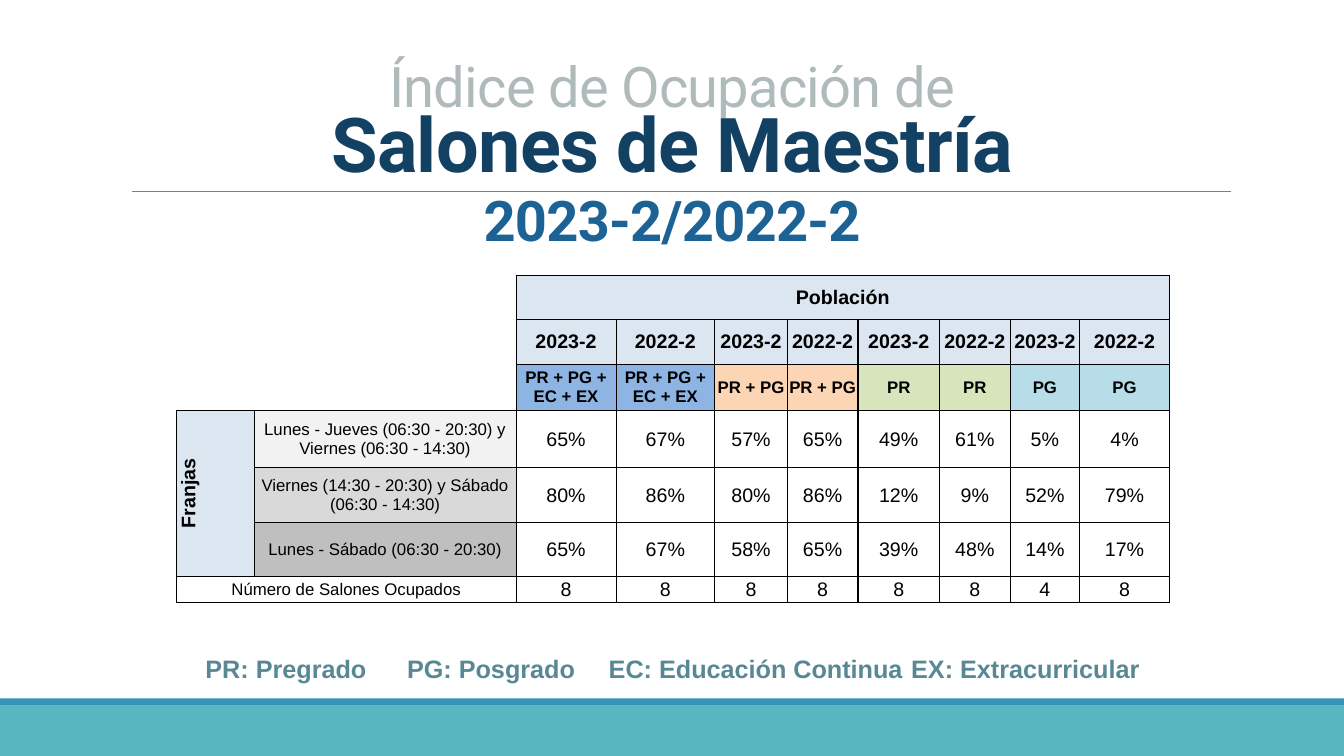
"""Build the classroom occupancy slide for master's programmes."""
from dataclasses import dataclass

from lxml.etree import SubElement
from pptx import Presentation
from pptx.dml.color import RGBColor
from pptx.enum.shapes import MSO_CONNECTOR as CONN, MSO_SHAPE as SHAPE
from pptx.enum.text import MSO_ANCHOR as ANCHOR, MSO_AUTO_SIZE as FIT, PP_ALIGN as ALIGN
from pptx.oxml.ns import qn
from pptx.util import Inches, Pt

TERMS = ["2023-2", "2022-2"]
GROUPS = ["PR + PG + EC + EX", "PR + PG", "PR", "PG"]
SLOTS = [
    ("Lunes - Jueves (06:30 - 20:30) y Viernes (06:30 - 14:30)",
     [65, 67, 57, 65, 49, 61, 5, 4]),
    ("Viernes (14:30 - 20:30) y Sábado (06:30 - 14:30)",
     [80, 86, 80, 86, 12, 9, 52, 79]),
    ("Lunes - Sábado (06:30 - 20:30)",
     [65, 67, 58, 65, 39, 48, 14, 17]),
]
ROOMS = [8, 8, 8, 8, 8, 8, 4, 8]
LEGEND = ["PR: Pregrado", "PG: Posgrado", "EC: Educación Continua", "EX: Extracurricular"]
COL_WIDTHS = [0.77, 2.6, 0.99, 0.98, 0.72, 0.7, 0.81, 0.7, 0.69, 0.89]
ROW_HEIGHTS = [0.44, 0.44, 0.46, 0.57, 0.54, 0.54, 0.26]
FIRST_SLOT, LAST, LABEL_COLS = 3, 6, 2


@dataclass(frozen=True)
class Theme:
    title_font: str = "Roboto"
    body_font: str = "Arial"
    big: int = 54
    heading: int = 40
    legend: int = 18
    cell: int = 14
    label: int = 12
    thick: float = 1
    thin: float = 0.5
    grey: str = "AFBABB"
    navy: str = "134163"
    blue: str = "1D6294"
    teal: str = "58B6C0"
    stripe: str = "3494BA"
    rule: str = "808080"
    key: str = "588894"
    ink: str = "000000"
    white: str = "FFFFFF"
    header: str = "DCE6F1"
    groups: tuple = ("8DB4E2", "FCD5B4", "D8E4BC", "B7DEE8")
    slots: tuple = ("F2F2F2", "D9D9D9", "BFBFBF")


T = Theme()
TITLE = [
    ("Índice de Ocupación de", T.heading, T.grey, False, 0.75),
    ("Salones de Maestría", T.big, T.navy, True, 0.75),
    (" / ".join(TERMS).replace(" ", ""), T.heading, T.blue, True, 1.0),
]


def rgb(color):
    return RGBColor.from_string(color)


def write(p, text, font, size, color, bold):
    p.alignment = ALIGN.CENTER
    r = p.add_run()
    r.text = text
    r.font.name, r.font.size, r.font.bold = font, Pt(size), bold
    r.font.color.rgb = rgb(color)
    return r


def add_band(s, top, height, color):
    sp = s.shapes.add_shape(SHAPE.RECTANGLE, 0, Inches(top), Inches(13.33), Inches(height))
    sp.shadow.inherit = False
    sp.fill.solid()
    sp.fill.fore_color.rgb = rgb(color)
    sp.line.fill.background()


def add_rule(s):
    line = s.shapes.add_connector(CONN.STRAIGHT, Inches(1.31), Inches(1.9), Inches(12.21), Inches(1.9))
    line.line.color.rgb = rgb(T.rule)
    line.line.width = Pt(T.thin)
    SubElement(line._element.spPr, qn("a:effectLst"))


def add_title(s):
    sp = s.shapes.title
    sp.left, sp.top, sp.width, sp.height = 0, Inches(0.51), Inches(13.33), Inches(2.05)
    tf = sp.text_frame
    tf.auto_size, tf.vertical_anchor = FIT.NONE, ANCHOR.BOTTOM
    for i, (text, size, color, bold, spacing) in enumerate(TITLE):
        p = tf.add_paragraph() if i else tf.paragraphs[0]
        p.line_spacing = spacing
        r = write(p, text, T.title_font, size, color, bold)
        r.font._element.set("spc", "-50")


def cell_content(row, col):
    """Return text, size, bold and fill of a cell."""
    pair, term = divmod(col - LABEL_COLS, len(TERMS))
    slot = row - FIRST_SLOT
    if col < LABEL_COLS:
        if row < FIRST_SLOT:
            return "", T.cell, False, T.white
        if row == LAST:
            return "" if col else "Número de Salones Ocupados", T.label, False, None
        if col:
            return SLOTS[slot][0], T.label, False, T.slots[slot]
        return "" if slot else "Franjas", T.cell, True, T.header
    if row == 0:
        return "" if col > LABEL_COLS else "Población", T.cell, True, T.header
    if row == 1:
        return TERMS[term], T.cell, True, T.header
    if row == 2:
        return GROUPS[pair], T.label, True, T.groups[pair]
    value = str(ROOMS[col - LABEL_COLS]) if row == LAST else f"{SLOTS[slot][1][col - LABEL_COLS]}%"
    return value, T.cell, False, None


def cell_borders(row, col):
    """Return left, right, top and bottom widths; column pairs have thick outer edges."""
    if col < LABEL_COLS and row < FIRST_SLOT:
        return 0, T.thick * col, 0, T.thick * (row == FIRST_SLOT - 1)
    label = col < LABEL_COLS
    merged = row == 0 or (label and row == LAST)
    top_edge = row == FIRST_SLOT if label else row < 2
    edges = (col % 2 == 0, col % 2 == 1 or merged, top_edge, row in (0, LAST))
    return tuple(T.thick if edge else T.thin for edge in edges)


def set_borders(cell, widths):
    tc_pr = cell._tc.get_or_add_tcPr()
    for side, width in zip("LRTB", widths):
        ln = SubElement(tc_pr, qn(f"a:ln{side}"), w=str(Pt(width)))
        if width:
            fill = SubElement(ln, qn("a:solidFill"))
            SubElement(fill, qn("a:srgbClr"), val=T.ink)
        else:
            SubElement(ln, qn("a:noFill"))


def add_occupancy_table(s):
    frame = s.shapes.add_table(len(ROW_HEIGHTS), len(COL_WIDTHS), Inches(1.75), Inches(2.73),
                               Inches(sum(COL_WIDTHS)), Inches(sum(ROW_HEIGHTS)))
    table = frame.table
    table.first_row = table.horz_banding = False
    for column, width in zip(table.columns, COL_WIDTHS):
        column.width = Inches(width)
    for row, height in enumerate(ROW_HEIGHTS):
        table.rows[row].height = Inches(height)
        for col in range(len(COL_WIDTHS)):
            cell = table.cell(row, col)
            text, size, bold, fill = cell_content(row, col)
            cell.margin_left = cell.margin_right = cell.margin_top = Inches(0.01)
            cell.margin_bottom = 0
            cell.vertical_anchor = ANCHOR.MIDDLE
            set_borders(cell, cell_borders(row, col))
            if fill:
                cell.fill.solid()
                cell.fill.fore_color.rgb = rgb(fill)
            else:
                cell.fill.background()
            if text:
                write(cell.text_frame.paragraphs[0], text, T.body_font, size, T.ink, bold)
    table.cell(0, LABEL_COLS).merge(table.cell(0, len(COL_WIDTHS) - 1))
    table.cell(FIRST_SLOT, 0).merge(table.cell(LAST - 1, 0))
    table.cell(LAST, 0).merge(table.cell(LAST, 1))
    table.cell(FIRST_SLOT, 0)._tc.get_or_add_tcPr().set("vert", "vert270")


def add_legend(s):
    tf = s.shapes.add_textbox(Inches(1.42), Inches(6.43), Inches(10.5), Inches(0.4)).text_frame
    tf.word_wrap, tf.auto_size = True, FIT.SHAPE_TO_FIT_TEXT
    write(tf.paragraphs[0], "\t".join(LEGEND), T.body_font, T.legend, T.key, True)


def main():
    prs = Presentation()
    prs.slide_width, prs.slide_height = Inches(13.33), Inches(7.5)
    s = prs.slides.add_slide(prs.slide_layouts[5])
    add_band(s, 7, 0.5, T.teal)
    add_band(s, 6.93, 0.07, T.stripe)
    add_rule(s)
    add_title(s)
    add_occupancy_table(s)
    add_legend(s)
    prs.save("out.pptx")


if __name__ == "__main__":
    main()
